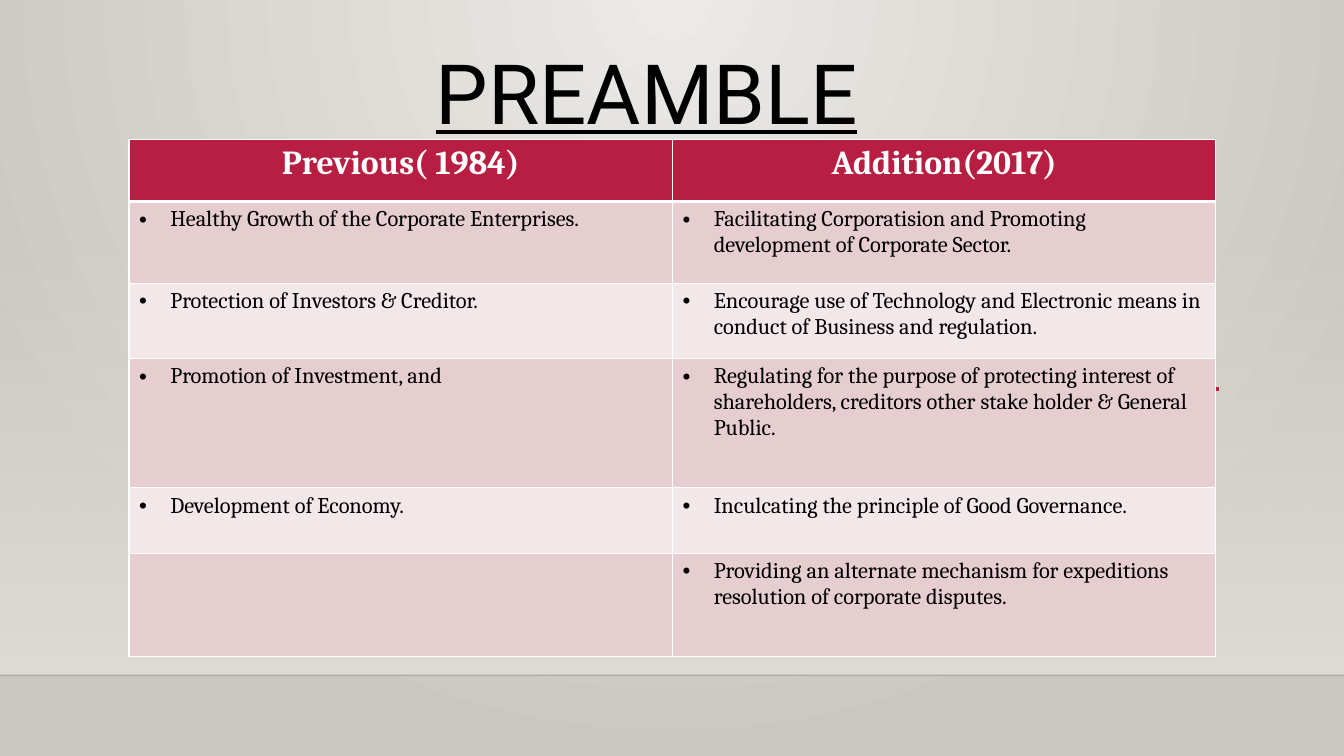
from typing import NamedTuple

from lxml.etree import SubElement
from pptx import Presentation
from pptx.dml.color import RGBColor
from pptx.enum.shapes import MSO_CONNECTOR, MSO_SHAPE
from pptx.enum.text import MSO_ANCHOR, MSO_AUTO_SIZE, PP_ALIGN
from pptx.oxml import parse_xml
from pptx.oxml.ns import nsdecls, qn
from pptx.util import Pt

EMU_PER_PX = 9144  # 100 px to the inch

BLACK = RGBColor(0x00, 0x00, 0x00)
NEAR_BLACK = RGBColor(0x00, 0x00, 0x01)
WHITE = RGBColor(0xFF, 0xFF, 0xFF)
CRIMSON = RGBColor(0xB7, 0x1E, 0x42)
ROSE = RGBColor(0xE6, 0xCD, 0xCF)
PALE_ROSE = RGBColor(0xF3, 0xE8, 0xE9)
GLOW = RGBColor(0xEC, 0xEA, 0xE7)
STONE = RGBColor(0xCA, 0xC7, 0xC1)
WALL = RGBColor(0xDF, 0xDB, 0xD5)

TITLE_FONT = dict(name="Roboto", size=Pt(59.4), underline=True, bold=False)
HEADER_FONT = dict(name="Cambria", size=Pt(24), bold=True)
BODY_FONT = dict(name="Cambria", size=Pt(16), bold=False)


class Rule(NamedTuple):
    left: int
    right: int
    y: int
    color: RGBColor
    points: float
    opacity: int = 100


class Row(NamedTuple):
    height: int
    previous: str
    addition: str


RULES = [
    Rule(0, 1333, 670, NEAR_BLACK, 1, 20),
    Rule(264, 1209, 386, CRIMSON, 2.5),
]

ROWS = [
    Row(62, "Previous( 1984)", "Addition(2017)"),
    Row(81, "Healthy Growth of the Corporate Enterprises.",
        "Facilitating Corporatision and Promoting development of Corporate Sector."),
    Row(75, "Protection of Investors & Creditor.",
        "Encourage use of Technology and Electronic means in conduct of Business and regulation."),
    Row(128, "Promotion of Investment, and",
        "Regulating for the purpose of protecting interest of shareholders, "
        "creditors other stake holder & General Public."),
    Row(65, "Development of Economy.", "Inculcating the principle of Good Governance."),
    Row(102, "",
        "Providing an alternate mechanism for expeditions resolution of corporate disputes."),
]


def px(length: int) -> int:
    return length * EMU_PER_PX


def apply(target, values: dict) -> None:
    for name, value in values.items():
        setattr(target, name, value)


def set_gradient(properties, start: RGBColor, end: RGBColor, direction: str,
                 start_opacity: int = 100) -> None:
    """Replace the gradient fill held by a properties element."""
    gradient = parse_xml(
        f'<a:gradFill {nsdecls("a")} rotWithShape="1"><a:gsLst>'
        f'<a:gs pos="0"><a:srgbClr val="{start}">'
        f'<a:alpha val="{start_opacity * 1000}"/></a:srgbClr></a:gs>'
        f'<a:gs pos="100000"><a:srgbClr val="{end}"/></a:gs>'
        f'</a:gsLst>{direction}</a:gradFill>')
    properties.replace(properties.find(qn("a:gradFill")), gradient)


def add_backdrop(slide) -> None:
    slide.background.fill.gradient()
    set_gradient(
        slide.background._cSld.bg.bgPr, GLOW, STONE,
        '<a:path path="circle"><a:fillToRect l="43000" t="0" r="43000" b="100000"/></a:path>')
    wall = slide.shapes.add_shape(MSO_SHAPE.RECTANGLE, 0, px(221), px(1333), px(449))
    wall.shadow.inherit = False
    wall.line.fill.background()
    wall.fill.gradient()
    set_gradient(wall._element.spPr, WALL, WALL, '<a:lin ang="5400000" scaled="0"/>', 0)


def add_rule(slide, rule: Rule) -> None:
    line = slide.shapes.add_connector(
        MSO_CONNECTOR.STRAIGHT, px(rule.left), px(rule.y), px(rule.right), px(rule.y))
    line.line.color.rgb = rule.color
    line.line.width = Pt(rule.points)
    properties = line._element.spPr
    if rule.opacity < 100:
        color = properties.find(".//" + qn("a:srgbClr"))
        SubElement(color, qn("a:alpha"), val=str(rule.opacity * 1000))
    SubElement(properties, qn("a:effectLst"))


def format_title(title) -> None:
    apply(title, dict(left=px(416), top=px(24), width=px(451), height=px(117)))
    frame = title.text_frame
    frame.text = "PREAMBLE"
    apply(frame, dict(auto_size=MSO_AUTO_SIZE.NONE, word_wrap=True,
                      vertical_anchor=MSO_ANCHOR.BOTTOM, margin_left=px(10),
                      margin_right=px(10), margin_top=px(5), margin_bottom=0))
    paragraph = frame.paragraphs[0]
    apply(paragraph, dict(alignment=PP_ALIGN.CENTER, line_spacing=0.9))
    font = paragraph.runs[0].font
    apply(font, TITLE_FONT)
    font.color.rgb = BLACK


def set_borders(cell, top: int, bottom: int) -> None:
    """Draw white borders; top and bottom are widths in points."""
    widths = dict(lnL=1, lnR=1, lnT=top, lnB=bottom)
    properties = cell._tc.get_or_add_tcPr()
    for index, (tag, points) in enumerate(widths.items()):
        properties.insert(index, parse_xml(
            f'<a:{tag} {nsdecls("a")} w="{Pt(points)}"><a:solidFill>'
            f'<a:srgbClr val="{WHITE}"/></a:solidFill></a:{tag}>'))


def add_bullet(paragraph) -> None:
    properties = paragraph._p.get_or_add_pPr()
    properties.set("marL", str(px(31)))
    properties.set("indent", str(px(-31)))
    SubElement(properties, qn("a:buFont"), typeface="Arial")
    SubElement(properties, qn("a:buChar"), char="•")


def fill_cell(cell, text: str, row_index: int) -> None:
    is_header = row_index == 0
    cell.fill.solid()
    cell.fill.fore_color.rgb = CRIMSON if is_header else (PALE_ROSE, ROSE)[row_index % 2]
    set_borders(cell, top=3 if row_index == 1 else 1, bottom=3 if is_header else 1)
    if not text:
        return
    paragraph = cell.text_frame.paragraphs[0]
    if is_header:
        paragraph.alignment = PP_ALIGN.CENTER
    else:
        add_bullet(paragraph)
    run = paragraph.add_run()
    run.text = text
    apply(run.font, HEADER_FONT if is_header else BODY_FONT)
    run.font.color.rgb = WHITE if is_header else BLACK


def add_comparison(slide) -> None:
    height = sum(row.height for row in ROWS)
    table = slide.shapes.add_table(
        len(ROWS), 2, px(128), px(138), px(1078), px(height)).table
    for row_index, row in enumerate(ROWS):
        table.rows[row_index].height = px(row.height)
        for column_index, text in enumerate((row.previous, row.addition)):
            fill_cell(table.cell(row_index, column_index), text, row_index)


def main() -> None:
    presentation = Presentation()
    presentation.slide_width = px(1333)
    presentation.slide_height = px(750)
    slide = presentation.slides.add_slide(presentation.slide_layouts.get_by_name("Title Only"))
    add_backdrop(slide)
    for rule in RULES:
        add_rule(slide, rule)
    format_title(slide.shapes.title)
    add_comparison(slide)
    presentation.save("out.pptx")


if __name__ == "__main__":
    main()
